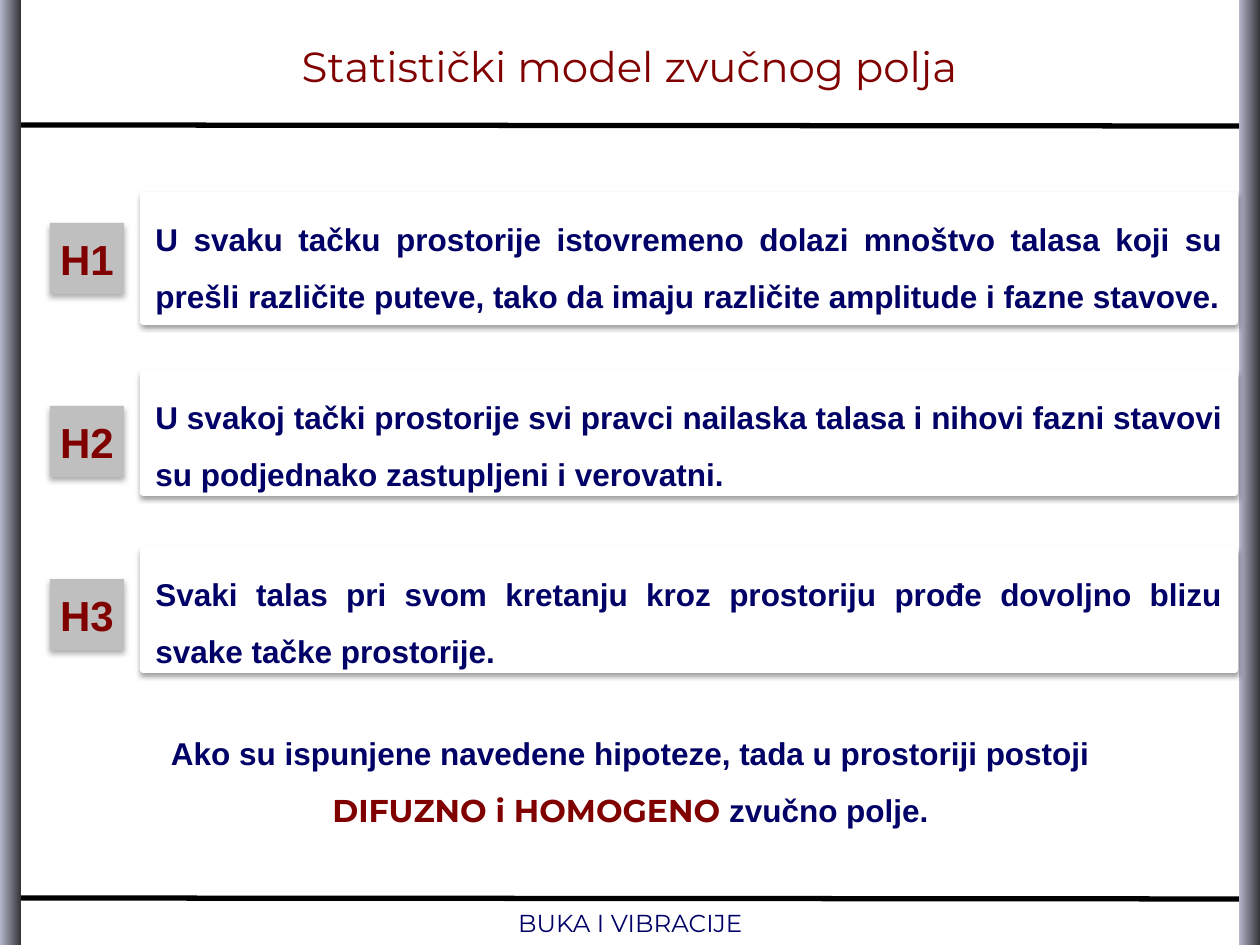
from lxml import etree
from pptx import Presentation
from pptx.dml.color import RGBColor
from pptx.enum.shapes import MSO_CONNECTOR, MSO_SHAPE
from pptx.enum.text import MSO_ANCHOR, MSO_AUTO_SIZE, PP_ALIGN
from pptx.oxml.ns import qn
from pptx.util import Emu, Pt

RECT = MSO_SHAPE.RECTANGLE
STRAIGHT = MSO_CONNECTOR.STRAIGHT
TOP, MIDDLE = MSO_ANCHOR.TOP, MSO_ANCHOR.MIDDLE
CENTER, JUSTIFY = PP_ALIGN.CENTER, PP_ALIGN.JUSTIFY
NO_AUTOFIT = MSO_AUTO_SIZE.NONE

COLORS = {
    "navy": "000066",
    "maroon": "800000",
    "gray": "BFBFBF",
    "white": "FFFFFF",
    "black": "000000",
    "bar_light": "B5B7CB",
    "bar_dark": "333439",
}
HYPOTHESES = [
    ("H1", 223, 195, 127,
     "U svaku tačku prostorije istovremeno dolazi mnoštvo talasa koji su prešli "
     "različite puteve, tako da imaju različite amplitude i fazne stavove."),
    ("H2", 406, 373, 120,
     "U svakoj tački prostorije svi pravci nailaska talasa i nihovi fazni stavovi "
     "su podjednako zastupljeni i verovatni."),
    ("H3", 579, 550, 120,
     "Svaki talas pri svom kretanju kroz prostoriju prođe dovoljno blizu svake "
     "tačke prostorije."),
]


def px(n):
    """Convert pixels at 126 per inch to EMU."""
    return Emu(round(n * 914400 / 126))


def rgb(name):
    """Return the named colour."""
    return RGBColor.from_string(COLORS[name])


def add_text(p, text, size=18, font="Arial", color="navy", bold=True,
             align=CENTER, spacing=None, after=None):
    """Append a formatted run to a paragraph."""
    p.alignment = align
    if spacing is not None:
        p.line_spacing = spacing
    if after is not None:
        p.space_after = Pt(after)
    r = p.add_run()
    r.text = text
    r.font.size, r.font.name, r.font.bold = Pt(size), font, bold
    r.font.color.rgb = rgb(color)


def set_frame(sp, anchor=TOP, wrap=True, inset=None):
    """Set up the text frame of a shape and return it."""
    tf = sp.text_frame
    tf.auto_size = NO_AUTOFIT
    tf.word_wrap = wrap
    tf.vertical_anchor = anchor
    if inset is not None:
        tf.margin_left = tf.margin_right = px(inset)
        tf.margin_top = tf.margin_bottom = px(inset)
    return tf


def add_shadow(sp, alpha, blur, dist):
    """Give a shape a soft black shadow that falls straight down."""
    effects = sp._element.spPr.find(qn("a:effectLst"))
    shadow = etree.SubElement(
        effects, qn("a:outerShdw"), blurRad=str(Pt(blur)), dist=str(Pt(dist)),
        dir="5400000", rotWithShape="0")
    black = etree.SubElement(shadow, qn("a:srgbClr"), val=COLORS["black"])
    etree.SubElement(black, qn("a:alpha"), val=str(alpha * 1000))


def add_rect(s, x, y, w, h, fill=None, line=None):
    """Add a rectangle without a shadow."""
    sp = s.shapes.add_shape(RECT, px(x), px(y), px(w), px(h))
    sp.shadow.inherit = False
    if fill:
        sp.fill.solid()
        sp.fill.fore_color.rgb = rgb(fill)
    if line:
        sp.line.color.rgb = rgb(line)
        sp.line.width = Pt(3)
    else:
        sp.line.fill.background()
    return sp


def add_side_bar(s, x):
    """Add a full-height gradient bar."""
    fill = add_rect(s, x, 0, 21, 945).fill
    fill.gradient()
    fill.gradient_angle = 0
    for stop, name, position in zip(fill.gradient_stops, ("bar_light", "bar_dark"), (0, 1)):
        stop.color.rgb = rgb(name)
        stop.position = position


def add_rule(s, y):
    """Add a slightly sloping rule across the slide."""
    cx = s.shapes.add_connector(STRAIGHT, px(0), px(y), px(1258), px(y + 1))
    cx.line.color.rgb = rgb("black")
    cx.line.width = Pt(3)
    etree.SubElement(cx._element.spPr, qn("a:effectLst"))


def add_hypothesis(s, label, label_y, y, h, statement):
    """Add a hypothesis statement and its badge."""
    sp = add_rect(s, 143, y, 1092, h, "white", "white")
    add_shadow(sp, 38, 3.1, 1.6)
    add_text(set_frame(sp).paragraphs[0], statement, align=JUSTIFY, spacing=1.5)
    badge = add_rect(s, 50, label_y, 74, 71, "gray")
    add_shadow(badge, 32, 3.5, 2.2)
    tf = set_frame(badge, wrap=False, inset=10)
    add_text(tf.paragraphs[0], label, size=24, color="maroon")


def add_title(s, text):
    """Place and fill the title placeholder."""
    sp = s.shapes.title
    sp.left, sp.top, sp.width, sp.height = px(59), px(16), px(1141), px(100)
    p = set_frame(sp, MIDDLE).paragraphs[0]
    add_text(p, text, size=24, font="Montserrat", color="maroon", bold=False, after=6)


def add_conclusion(s):
    """Add the two-line conclusion."""
    tf = set_frame(s.shapes.add_textbox(px(25), px(709), px(1211), px(120)))
    add_text(tf.paragraphs[0],
             "Ako su ispunjene navedene hipoteze, tada u prostoriji postoji", spacing=1.5)
    p = tf.add_paragraph()
    add_text(p, "DIFUZNO i HOMOGENO ", font="Montserrat", color="maroon", spacing=1.5)
    add_text(p, "zvučno polje.")


def add_footer(s, text):
    """Add the course name at the bottom."""
    tf = set_frame(s.shapes.add_textbox(px(25), px(908), px(1211), px(30)), MIDDLE)
    add_text(tf.paragraphs[0], text, size=14, font="Montserrat", bold=False, after=6)


def main():
    """Build and save the slide."""
    prs = Presentation()
    prs.slide_width, prs.slide_height = px(1260), px(945)
    s = prs.slides.add_slide(prs.slide_layouts[5])
    for y in (898, 125):
        add_rule(s, y)
    for x in (0, 1239):
        add_side_bar(s, x)
    for hypothesis in HYPOTHESES:
        add_hypothesis(s, *hypothesis)
    add_conclusion(s)
    add_title(s, "Statistički model zvučnog polja")
    add_footer(s, "BUKA I VIBRACIJE")
    prs.save("out.pptx")


if __name__ == "__main__":
    main()
